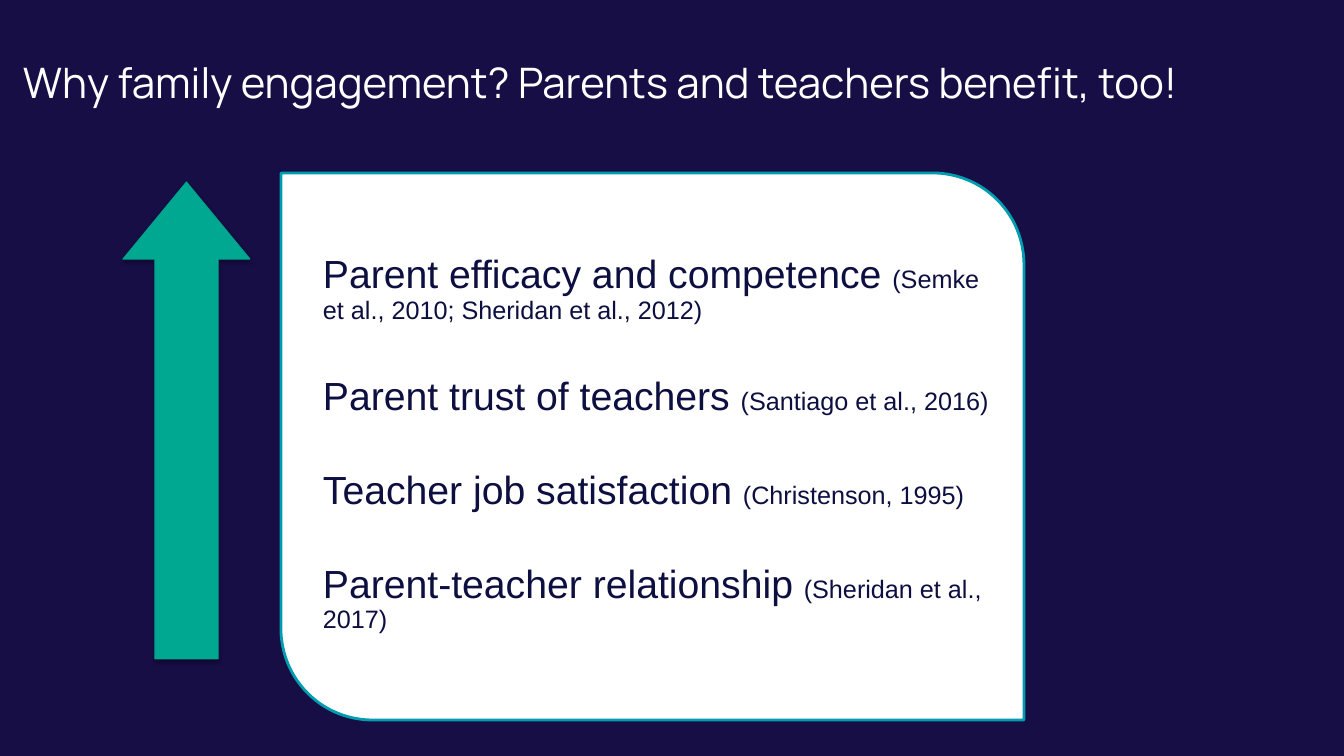
"""Build the slide on how family engagement benefits parents and teachers."""
from lxml import etree
from pptx import Presentation
from pptx.dml.color import RGBColor
from pptx.enum import shapes, text
from pptx.oxml import ns
from pptx.util import Pt

PX = 914400 / 100.8
NAVY, WHITE, INK = "160E44", "FFFFFF", "0D0F41"
BENEFITS = [
    ("Parent efficacy and competence ", "(Semke et al., 2010; Sheridan et al., 2012)"),
    ("Parent trust of teachers ", "(Santiago et al., 2016)"),
    ("Teacher job satisfaction ", "(Christenson, 1995)"),
    ("Parent-teacher relationship ", "(Sheridan et al., 2017)"),
]


def px(*lengths):
    return [round(n * PX) for n in lengths]


def rgb(value):
    return RGBColor.from_string(value)


prs = Presentation()
prs.slide_width, prs.slide_height = px(1344, 756)
s = prs.slides.add_slide(prs.slide_layouts[6])
s.background.fill.solid()
s.background.fill.fore_color.rgb = rgb(NAVY)

title = s.shapes.add_textbox(*px(13, 52, 1317, 93))
tf = title.text_frame
tf.word_wrap = True
tf.text = "Why family engagement? Parents and teachers benefit, too!"
font = tf.paragraphs[0].runs[0].font
font.name, font.size, font.color.rgb = "Manrope", Pt(30), rgb(WHITE)

kinds = shapes.MSO_SHAPE
for kind, box, adjustments, fill, line, width in [
    (kinds.ROUND_2_DIAG_RECTANGLE, (281, 173, 743, 547), (0, 0.167), WHITE, "009CB0", 2),
    (kinds.UP_ARROW, (123, 182, 127, 477), (0.498, 0.607), "00A791", "00A38E", 0.75),
]:
    sp = s.shapes.add_shape(kind, *px(*box))
    sp.shadow.inherit = False
    for i, value in enumerate(adjustments):
        sp.adjustments[i] = value
    sp.fill.solid()
    sp.fill.fore_color.rgb = rgb(fill)
    sp.line.color.rgb = rgb(line)
    sp.line.width = Pt(width)

effects = sp.element.spPr.find(ns.qn("a:effectLst"))
shadow = etree.SubElement(effects, ns.qn("a:outerShdw"), blurRad=str(Pt(3.1)),
                          dist=str(Pt(1.6)), dir="5400000", rotWithShape="0")
color = etree.SubElement(shadow, ns.qn("a:srgbClr"), val="000000")
etree.SubElement(color, ns.qn("a:alpha"), val="38000")

benefits = s.shapes.add_textbox(*px(311, 243, 698, 366))
tf = benefits.text_frame
tf.word_wrap = True
tf.vertical_anchor = text.MSO_ANCHOR.TOP
tf.margin_left, tf.margin_top, tf.margin_right, tf.margin_bottom = px(12, 12, 12, 12)
for i, (benefit, citation) in enumerate(BENEFITS):
    p = tf.add_paragraph() if i else tf.paragraphs[0]
    p.line_spacing = 0.9
    if i:
        p.space_before = Pt(37)
    for words, size in [(benefit, 28), (citation, 18)]:
        r = p.add_run()
        r.text = words
        r.font.name, r.font.size, r.font.color.rgb = "Arial", Pt(size), rgb(INK)

prs.save("out.pptx")
